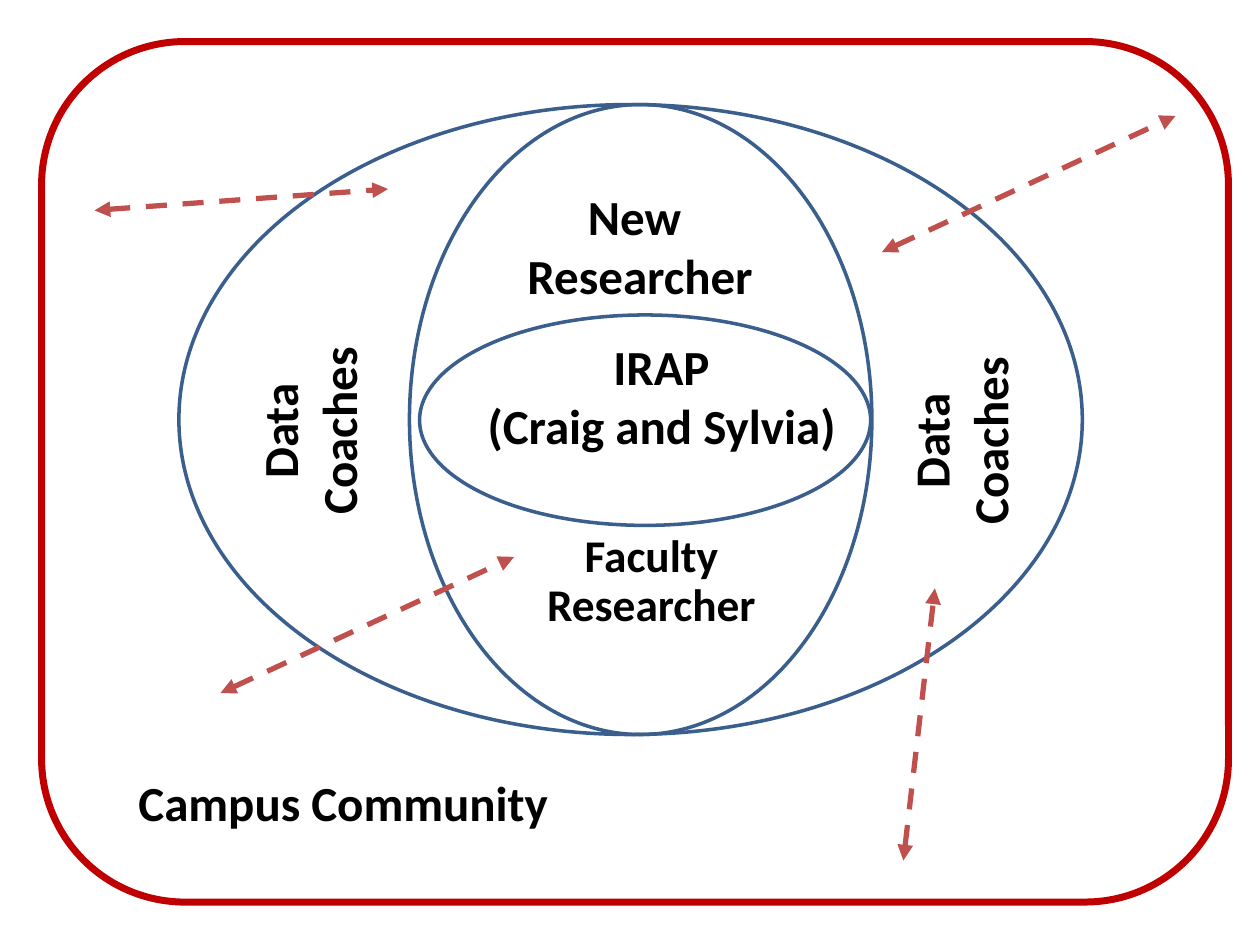
from dataclasses import dataclass

from lxml import etree
from pptx import Presentation
from pptx.dml.color import RGBColor
from pptx.enum import dml, shapes, text
from pptx.oxml import ns
from pptx.util import Inches, Pt


@dataclass(frozen=True)
class Theme:
    font: str = "Calibri"
    ink: RGBColor = RGBColor(0x00, 0x00, 0x00)
    ring: RGBColor = RGBColor(0x3A, 0x5F, 0x8C)
    frame: RGBColor = RGBColor(0xC0, 0x00, 0x00)
    arrow: RGBColor = RGBColor(0xC0, 0x50, 0x4D)
    size: float = 28
    small: float = 25.9
    ring_width: float = 2
    arrow_width: float = 3
    frame_width: float = 4


THEME = Theme()


def add_outline(s, kind, box, color, width):
    """Add an unfilled preset shape."""
    sp = s.shapes.add_shape(kind, *map(Inches, box))
    sp.shadow.inherit = False
    sp.fill.background()
    sp.line.color.rgb = color
    sp.line.width = Pt(width)


def add_ring(s, box):
    add_outline(s, shapes.MSO_SHAPE.OVAL, box, THEME.ring, THEME.ring_width)


def add_label(s, lines, box, size=THEME.size, spacing=None, rotation=0,
              align=text.PP_ALIGN.CENTER, wrap=True):
    sp = s.shapes.add_textbox(*map(Inches, box))
    sp.rotation = rotation
    tf = sp.text_frame
    tf.word_wrap = wrap
    tf.vertical_anchor = text.MSO_ANCHOR.MIDDLE
    tf.text = "\n".join(lines)
    for p in tf.paragraphs:
        p.alignment = align
        p.line_spacing = spacing
        p.font.name = THEME.font
        p.font.size = Pt(size)
        p.font.bold = True
        p.font.color.rgb = THEME.ink
    return tf


def add_exchange_arrow(s, start, end):
    """Add a dashed line with a triangle at both ends."""
    line = s.shapes.add_connector(
        shapes.MSO_CONNECTOR.STRAIGHT, *map(Inches, start + end))
    line.line.color.rgb = THEME.arrow
    line.line.width = Pt(THEME.arrow_width)
    line.line.dash_style = dml.MSO_LINE.DASH
    ln = line.line._get_or_add_ln()
    for tag in ("a:headEnd", "a:tailEnd"):
        etree.SubElement(ln, ns.qn(tag), type="triangle")
    etree.SubElement(line._element.spPr, ns.qn("a:effectLst"))


def main():
    prs = Presentation()
    prs.slide_width, prs.slide_height = Inches(10), Inches(7.5)
    s = prs.slides.add_slide(prs.slide_layouts[6])

    core = add_label(s, ["IRAP", "(Craig and Sylvia)"], (3.5, 2.75, 3.5, 1.25))
    core.margin_bottom = Inches(0.52)  # lifts the text above the middle
    add_ring(s, (3.33, 2.5, 3.58, 1.67))

    add_label(s, ["New ", "Researcher"], (3.33, 1.5, 3.5, 0.9))
    add_ring(s, (3.25, 0.83, 3.67, 5))
    add_label(s, ["Faculty", "Researcher"], (3.42, 4.17, 3.5, 0.9),
              size=THEME.small, spacing=0.9)

    add_ring(s, (1.42, 0.83, 7.17, 5))
    for left, top in ((1.28, 2.97), (6.45, 3.05)):
        add_label(s, ["Data", "Coaches"], (left, top, 2.33, 0.9), rotation=270)

    add_outline(s, shapes.MSO_SHAPE.ROUNDED_RECTANGLE,
                (0.33, 0.33, 9.42, 6.83), THEME.frame, THEME.frame_width)
    add_label(s, ["Campus Community"], (1, 6.08, 3.49, 0.57),
              align=text.PP_ALIGN.LEFT, wrap=False)

    for start, end in (
        ((0.75, 1.67), (3.08, 1.5)),
        ((1.75, 5.5), (4.08, 4.42)),
        ((7.17, 6.83), (7.42, 4.67)),
        ((7, 2), (9.33, 0.92)),
    ):
        add_exchange_arrow(s, start, end)

    prs.save("out.pptx")


if __name__ == "__main__":
    main()
